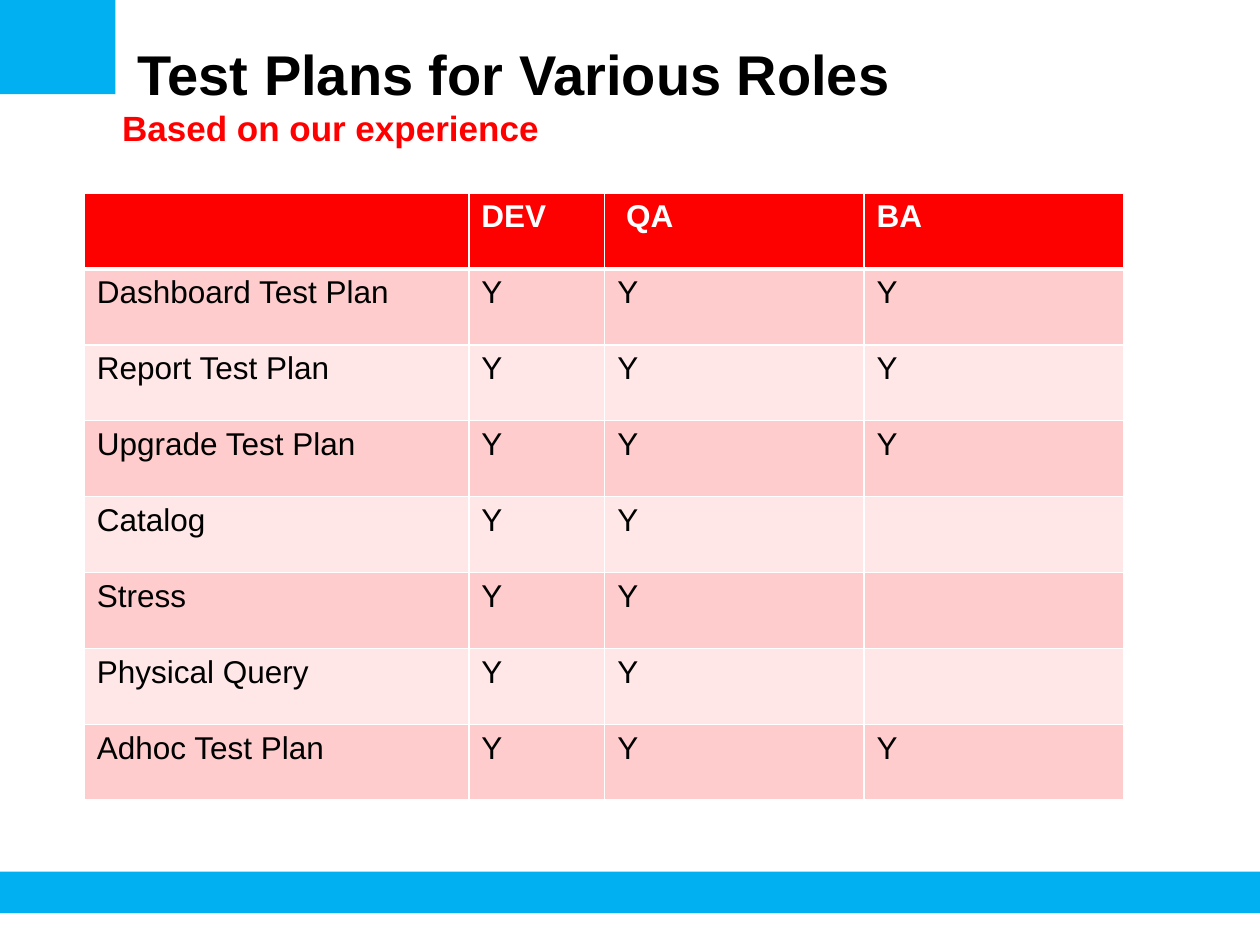
from dataclasses import dataclass

from lxml.etree import SubElement
from pptx import Presentation
from pptx.dml.color import RGBColor
from pptx.enum.shapes import MSO_SHAPE
from pptx.enum.text import MSO_ANCHOR, MSO_AUTO_SIZE, PP_ALIGN
from pptx.oxml.ns import qn
from pptx.slide import Slide
from pptx.table import _Cell
from pptx.text.text import _Paragraph
from pptx.util import Cm, Pt

COLORS = {
    "band": "00B0F0",
    "header": "FD0000",
    "odd_row": "FECCCC",
    "even_row": "FFE7E7",
    "accent": "FF0000",
    "text": "000000",
    "white": "FFFFFF",
}
FONT = "Arial"


@dataclass(frozen=True)
class Band:
    left: float
    top: float
    width: float
    height: float


@dataclass(frozen=True)
class TestPlan:
    name: str
    dev: str = "Y"
    qa: str = "Y"
    ba: str = ""

    def entries(self) -> tuple[str, ...]:
        return self.name, self.dev, self.qa, self.ba


BANDS = (Band(0, 0, 2.33, 1.9), Band(0, 17.57, 25.4, 0.84))
HEADER = TestPlan("", "DEV", " QA", "BA")
PLANS = (
    TestPlan("Dashboard Test Plan", ba="Y"),
    TestPlan("Report Test Plan", ba="Y"),
    TestPlan("Upgrade Test Plan", ba="Y"),
    TestPlan("Catalog"),
    TestPlan("Stress"),
    TestPlan("Physical Query"),
    TestPlan("Adhoc Test Plan", ba="Y"),
)
COLUMN_WIDTHS = (7.75, 2.74, 5.23, 5.23)
ROW_HEIGHT = 1.53


def rgb(name: str) -> RGBColor:
    return RGBColor.from_string(COLORS[name])


def add_run(paragraph: _Paragraph, text: str, size: int, color: str, bold: bool) -> None:
    run = paragraph.add_run()
    run.text = text
    run.font.name = FONT
    run.font.size = Pt(size)
    run.font.bold = bold
    run.font.color.rgb = rgb(color)


def add_band(slide: Slide, band: Band) -> None:
    shape = slide.shapes.add_shape(
        MSO_SHAPE.RECTANGLE, Cm(band.left), Cm(band.top), Cm(band.width), Cm(band.height)
    )
    shape.shadow.inherit = False
    shape.fill.solid()
    shape.fill.fore_color.rgb = rgb("band")
    shape.line.fill.background()


def add_title(slide: Slide) -> None:
    title = slide.shapes.title
    title.left, title.top, title.width, title.height = Cm(2.46), Cm(0.84), Cm(21.06), Cm(2.11)
    frame = title.text_frame
    frame.margin_left = frame.margin_top = frame.margin_right = frame.margin_bottom = 0
    frame.auto_size = MSO_AUTO_SIZE.NONE
    frame.vertical_anchor = MSO_ANCHOR.MIDDLE
    heading = frame.paragraphs[0]
    heading.alignment = PP_ALIGN.LEFT
    add_run(heading, " Test Plans for Various Roles", 32, "text", True)
    heading.add_line_break()
    add_run(heading, "Based on our experience", 20, "accent", True)


def set_borders(cell: _Cell, row: int) -> None:
    """Draw thin white borders, with a thick one between header and body."""
    widths = {"L": 1, "R": 1, "T": 3 if row == 1 else 1, "B": 3 if row == 0 else 1}
    properties = cell._tc.get_or_add_tcPr()
    for side, width in widths.items():
        border = SubElement(properties, qn(f"a:ln{side}"), w=str(Pt(width)))
        SubElement(SubElement(border, qn("a:solidFill")), qn("a:srgbClr"), val=COLORS["white"])


def add_plan_table(slide: Slide) -> None:
    plan_rows = (HEADER, *PLANS)
    table = slide.shapes.add_table(
        len(plan_rows), len(COLUMN_WIDTHS), Cm(1.7), Cm(3.89),
        Cm(sum(COLUMN_WIDTHS)), Cm(ROW_HEIGHT * len(plan_rows)),
    ).table
    for column, width in zip(table.columns, COLUMN_WIDTHS):
        column.width = Cm(width)
    for row, plan in enumerate(plan_rows):
        table.rows[row].height = Cm(ROW_HEIGHT)
        is_header = row == 0
        fill = "header" if is_header else "odd_row" if row % 2 else "even_row"
        for column, entry in enumerate(plan.entries()):
            cell = table.cell(row, column)
            set_borders(cell, row)
            cell.fill.solid()
            cell.fill.fore_color.rgb = rgb(fill)
            if entry:
                color = "white" if is_header else "text"
                add_run(cell.text_frame.paragraphs[0], entry, 18, color, is_header)


def main() -> None:
    presentation = Presentation()
    presentation.slide_width, presentation.slide_height = Cm(25.4), Cm(19.05)
    slide = presentation.slides.add_slide(presentation.slide_layouts[5])
    for band in BANDS:
        add_band(slide, band)
    add_title(slide)
    add_plan_table(slide)
    presentation.save("out.pptx")


if __name__ == "__main__":
    main()
